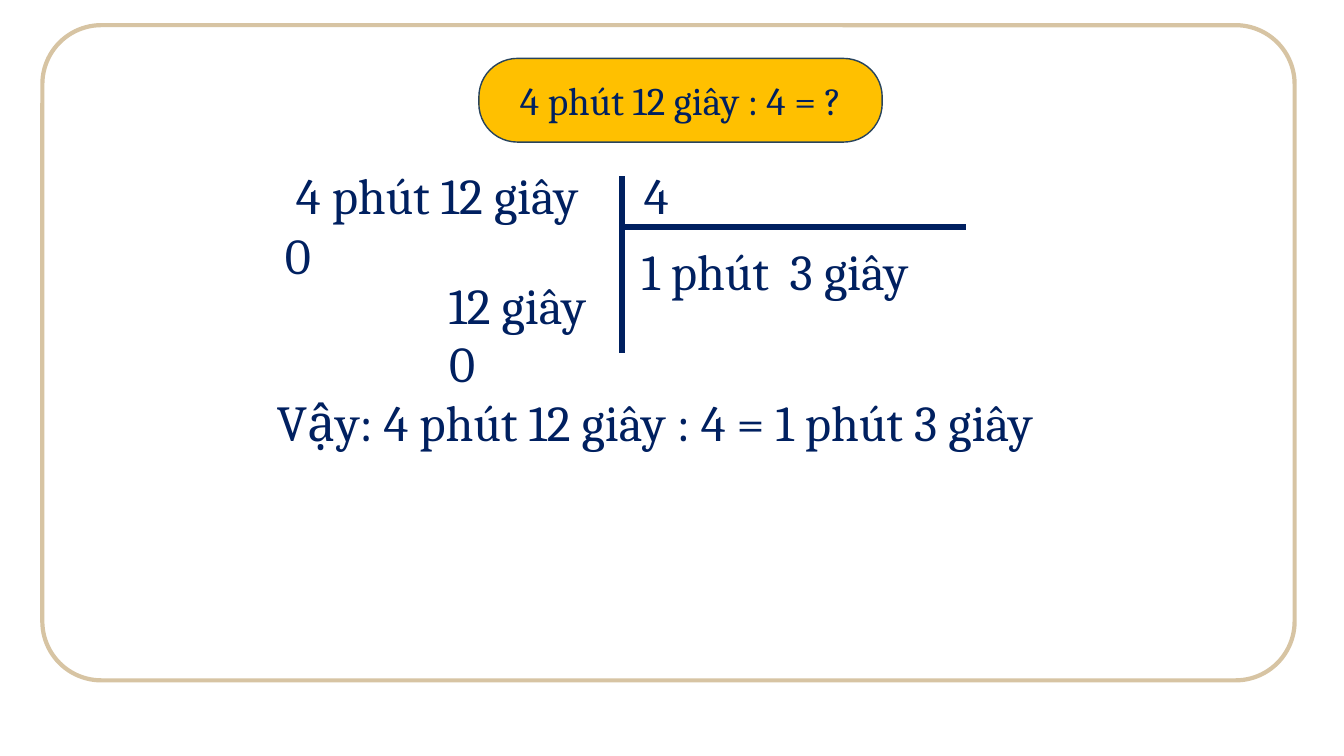
from lxml import etree
from pptx import Presentation
from pptx.dml.color import RGBColor
from pptx.enum import shapes, text
from pptx.oxml.ns import qn
from pptx.util import Inches, Pt

NAVY = RGBColor(0x00, 0x20, 0x60)
GOLD = RGBColor(0xFF, 0xC0, 0x00)
SLATE = RGBColor(0x28, 0x44, 0x5D)
SAND = RGBColor(0xD7, 0xC4, 0xA3)
WHITE = RGBColor(0xFF, 0xFF, 0xFF)
FONT = "Cambria"
LABEL_HEIGHT = 0.71

QUESTION = "4 phút 12 giây : 4 = ?"
# text, left, top, width
LABELS = [
    ("4 phút 12 giây", 2.67, 1.58, 3.33),
    ("4", 6.13, 1.58, 0.76),
    ("1 phút", 6.08, 2.33, 1.83),
    ("0", 2.58, 2.17, 0.75),
    ("12 giây", 4.17, 2.67, 1.92),
    ("3 giây", 7.67, 2.33, 1.5),
    ("0", 4.17, 3.25, 0.83),
    ("Vậy: 4 phút 12 giây : 4 = 1 phút 3 giây", 1.33, 3.83, 10.33),
]
# start x, start y, end x, end y
DIVISION_BARS = [(6.17, 1.75, 6.17, 3.5), (6.17, 2.25, 9.58, 2.25)]


def add_panel(slide, box, corner, fill, line, line_width):
    panel = slide.shapes.add_shape(
        shapes.MSO_SHAPE.ROUNDED_RECTANGLE, *map(Inches, box))
    panel.adjustments[0] = corner
    panel.shadow.inherit = False
    panel.fill.solid()
    panel.fill.fore_color.rgb = fill
    panel.line.color.rgb = line
    panel.line.width = Pt(line_width)
    return panel


def write(shape, wording, size):
    """Put one centred navy line of text into a shape."""
    shape.text_frame.word_wrap = True
    paragraph = shape.text_frame.paragraphs[0]
    paragraph.text = wording
    paragraph.alignment = text.PP_ALIGN.CENTER
    paragraph.font.name = FONT
    paragraph.font.size = Pt(size)
    paragraph.font.color.rgb = NAVY


def add_bar(slide, ends):
    bar = slide.shapes.add_connector(
        shapes.MSO_CONNECTOR.STRAIGHT, *map(Inches, ends))
    bar.line.color.rgb = NAVY
    bar.line.width = Pt(4.5)
    etree.SubElement(bar._element.spPr, qn("a:effectLst"))


def main():
    presentation = Presentation()
    presentation.slide_width = Inches(13.33)
    presentation.slide_height = Inches(7.5)
    slide = presentation.slides.add_slide(presentation.slide_layouts[6])

    add_panel(slide, (0.42, 0.25, 12.42, 6.5), 0.09, WHITE, SAND, 3)
    banner = add_panel(slide, (4.75, 0.58, 4, 0.83), 0.46, GOLD, SLATE, 1)
    banner.text_frame.vertical_anchor = text.MSO_ANCHOR.MIDDLE
    write(banner, QUESTION, 28)

    for ends in DIVISION_BARS:
        add_bar(slide, ends)
    for wording, left, top, width in LABELS:
        box = map(Inches, (left, top, width, LABEL_HEIGHT))
        label = slide.shapes.add_textbox(*box)
        label.text_frame.auto_size = text.MSO_AUTO_SIZE.SHAPE_TO_FIT_TEXT
        write(label, wording, 36)

    presentation.save("out.pptx")


if __name__ == "__main__":
    main()
